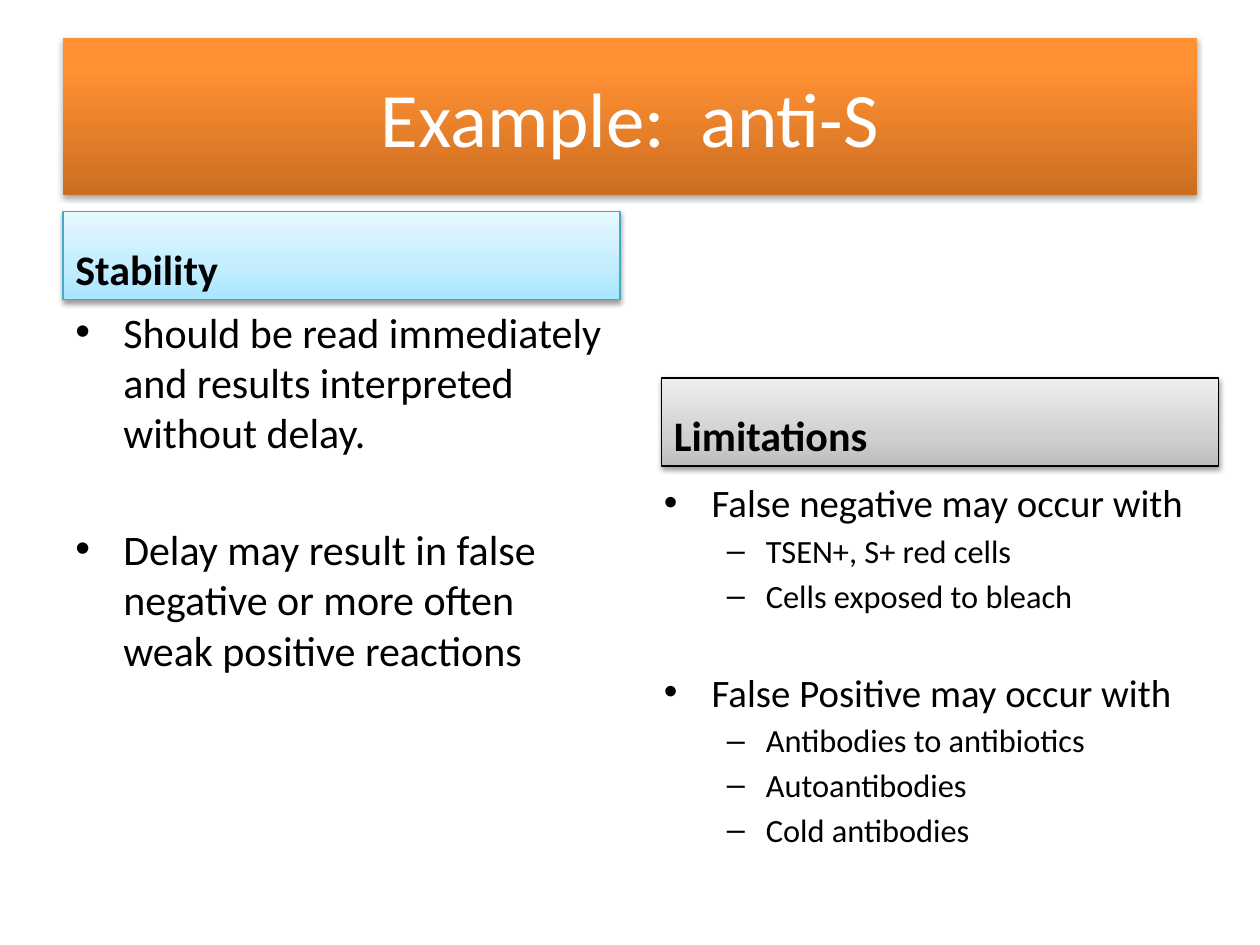
from lxml.etree import SubElement
from pptx import Presentation
from pptx.dml.color import RGBColor
from pptx.enum.shapes import MSO_SHAPE
from pptx.enum.text import MSO_ANCHOR, PP_ALIGN
from pptx.oxml.ns import qn
from pptx.util import Inches, Pt

W, H = 10, 7.5
MARGIN, COL_W, HEAD_H, BODY_H = 0.5, 4.42, 0.7, 3.45

TITLE = dict(
    text="Example:  anti-S", box=(MARGIN, 0.3, W - 2 * MARGIN, 1.25),
    stops=[(0, "CC6E20"), (80, "FF9034"), (100, "FF9136")], line=None, shadow=(35, 1.8),
    anchor=MSO_ANCHOR.MIDDLE, align=PP_ALIGN.CENTER, font=dict(size=44, color="FFFFFF"))
HEAD = dict(shadow=(38, 1.6), anchor=MSO_ANCHOR.BOTTOM, align=PP_ALIGN.LEFT,
            font=dict(size=24, color="000000", bold=True))
BANNERS = [
    TITLE,
    dict(HEAD, text="Stability", box=(MARGIN, 1.68, COL_W, HEAD_H), line="46AAC5",
         stops=[(0, "A7E6FF"), (35, "C1EDFF"), (100, "E7F8FF")]),
    dict(HEAD, text="Limitations", box=(5.25, 3, COL_W, HEAD_H), line="000000",
         stops=[(0, "BDBDBD"), (35, "D1D1D1"), (100, "EEEEEE")]),
]

LEVELS = [dict(bullet="•", left=0.38, hang=0.38), dict(bullet="–", left=0.81, hang=0.31)]
BODIES = [
    dict(box=(MARGIN, 2.38, COL_W, BODY_H), sizes=(24,), gaps=(37.7,), items=[
        (0, "Should be read immediately and results interpreted without delay."),
        (0, "Delay may result in false negative or more often weak positive reactions")]),
    dict(box=(5.17, 3.75, COL_W, BODY_H), sizes=(22.2, 18.5), gaps=(30.6, 3.3), items=[
        (0, "False negative may occur with"),
        (1, "TSEN+, S+ red cells"),
        (1, "Cells exposed to bleach"),
        (0, "False Positive may occur with"),
        (1, "Antibodies to antibiotics"),
        (1, "Autoantibodies"),
        (1, "Cold antibodies")]),
]


def rgb(value):
    """Turn a hex string into a colour."""
    return RGBColor.from_string(value)


def style(font, size, color="000000", bold=False):
    """Apply the slide's typeface and the given format."""
    for name, value in dict(name="Calibri", size=Pt(size), bold=bold).items():
        setattr(font, name, value)
    font.color.rgb = rgb(color)


def add_child(parent, tag, **attrs):
    """Append a drawing element with its attributes."""
    return SubElement(parent, qn(tag), {k: str(v) for k, v in attrs.items()})


def add_color(parent, value):
    """Append a solid colour element."""
    return add_child(parent, "a:srgbClr", val=value)


def add_banner(slide, text, box, stops, line, shadow, anchor, align, font):
    """Add a gradient bar with a soft shadow and one line of text."""
    s = slide.shapes.add_shape(MSO_SHAPE.RECTANGLE, *map(Inches, box))
    s.fill.gradient()
    s.fill.gradient_angle = 90
    sp = s._element.spPr
    gs_list = sp.find(".//" + qn("a:gsLst"))
    gs_list.clear()
    for pos, color in stops:
        add_color(add_child(gs_list, "a:gs", pos=pos * 1000), color)
    if line:
        s.line.color.rgb = rgb(line)
        s.line.width = Pt(0.75)
    else:
        s.line.fill.background()
    s.shadow.inherit = False
    alpha, dist = shadow
    outer = add_child(sp.find(qn("a:effectLst")), "a:outerShdw", blurRad=Pt(3.1),
                      dist=Pt(dist), dir=90 * 60000, rotWithShape=0)
    add_child(add_color(outer, "000000"), "a:alpha", val=alpha * 1000)
    tf = s.text_frame
    tf.word_wrap = True
    tf.vertical_anchor = anchor
    p = tf.paragraphs[0]
    p.text, p.alignment = text, align
    style(p.runs[0].font, **font)


def add_body(slide, box, sizes, gaps, items):
    """Add a bulleted list of one or two levels."""
    tf = slide.shapes.add_textbox(*map(Inches, box)).text_frame
    tf.word_wrap = True
    for i, (level, text) in enumerate(items):
        p = tf.add_paragraph() if i else tf.paragraphs[0]
        look = LEVELS[level]
        pPr = p._p.get_or_add_pPr()
        pPr.set("marL", str(Inches(look["left"])))
        pPr.set("indent", str(-Inches(look["hang"])))
        add_child(pPr, "a:buFont", typeface="Arial")
        add_child(pPr, "a:buChar", char=look["bullet"])
        p.level = level
        p.space_before = Pt(gaps[level] if i else 0)
        r = p.add_run()
        r.text = text
        style(r.font, sizes[level])


def main():
    """Build and save the slide."""
    prs = Presentation()
    prs.slide_width, prs.slide_height = Inches(W), Inches(H)
    slide = prs.slides.add_slide(prs.slide_layouts[6])
    for banner in BANNERS:
        add_banner(slide, **banner)
    for body in BODIES:
        add_body(slide, **body)
    prs.save("out.pptx")


if __name__ == "__main__":
    main()
